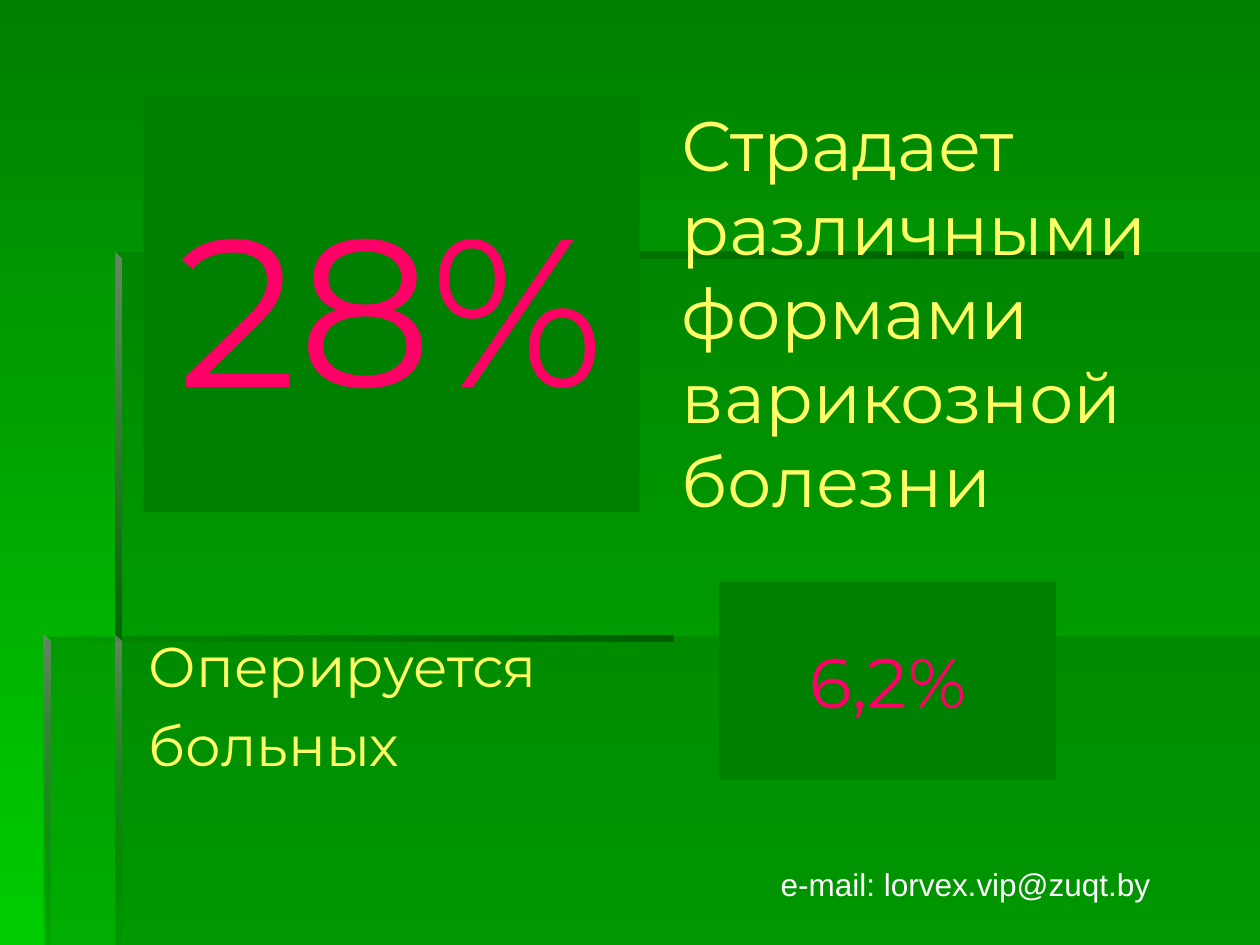
from dataclasses import dataclass

from lxml import etree
from pptx import Presentation
from pptx.dml.color import RGBColor
from pptx.enum import shapes, text
from pptx.oxml import ns
from pptx.util import Pt

WIDTH, HEIGHT = 720, 540
BAR = 3.6
GREEN, SHADE, DEEP, EDGE = "008000", "006600", "005E00", "668666"
PINK, YELLOW, WHITE = "FF0066", "FFFF66", "FFFFFF"


@dataclass
class Stop:
    color: str
    opacity: int = 100


@dataclass
class Bar:
    left: float
    top: float
    length: float
    start: Stop
    end: Stop
    vertical: bool = False

    def outline(self) -> list[tuple[float, float]]:
        if self.vertical:
            right, bottom = self.left + BAR, self.top + self.length
            return [(self.left, self.top), (self.left, bottom),
                    (right, bottom), (right, self.top + BAR)]
        right, bottom = self.left + self.length, self.top + BAR
        return [(self.left, self.top), (self.left, bottom),
                (right, bottom), (right, self.top)]


@dataclass
class Figure:
    left: float
    top: float
    width: float
    height: float
    label: str
    size: int


@dataclass
class Caption:
    left: float
    top: float
    width: float
    height: float
    lines: list[str]
    size: int
    color: str = YELLOW
    font: str = "Montserrat"
    space_before: float = 0


def rgb(color: str) -> RGBColor:
    return RGBColor.from_string(color)


def set_stops(fill, start: Stop, end: Stop, angle: int) -> None:
    fill.gradient()
    gradient = fill._fill._gradFill
    for child in list(gradient):
        gradient.remove(child)
    stops = etree.SubElement(gradient, ns.qn("a:gsLst"))
    for position, stop in ((0, start), (100000, end)):
        node = etree.SubElement(stops, ns.qn("a:gs"), pos=str(position))
        color = etree.SubElement(node, ns.qn("a:srgbClr"), val=stop.color)
        if stop.opacity < 100:
            etree.SubElement(color, ns.qn("a:alpha"), val=str(stop.opacity * 1000))
    etree.SubElement(gradient, ns.qn("a:lin"), ang=str(angle * 60000), scaled="0")


def draw_outline(slide, points: list[tuple[float, float]]):
    corners = [(Pt(x), Pt(y)) for x, y in points]
    builder = slide.shapes.build_freeform(*corners[0], scale=1.0)
    builder.add_line_segments(corners[1:], close=True)
    shape = builder.convert_to_shape()
    shape.shadow.inherit = False
    shape.line.fill.background()
    return shape


def draw_panel(slide, points: list[tuple[float, float]]) -> None:
    fill = draw_outline(slide, points).fill
    fill.solid()
    fill.fore_color.rgb = rgb(SHADE)
    color = fill._fill._solidFill.find(ns.qn("a:srgbClr"))
    etree.SubElement(color, ns.qn("a:alpha"), val="30000")


def draw_bar(slide, bar: Bar) -> None:
    shape = draw_outline(slide, bar.outline())
    set_stops(shape.fill, bar.start, bar.end, 90 if bar.vertical else 0)


def set_font(paragraph, name: str, size: int, color: str) -> None:
    paragraph.font.name = name
    paragraph.font.size = Pt(size)
    paragraph.font.color.rgb = rgb(color)


def draw_figure(slide, figure: Figure) -> None:
    shape = slide.shapes.add_shape(
        shapes.MSO_SHAPE.RECTANGLE, Pt(figure.left), Pt(figure.top),
        Pt(figure.width), Pt(figure.height))
    shape.shadow.inherit = False
    shape.fill.solid()
    shape.fill.fore_color.rgb = rgb(GREEN)
    shape.line.fill.background()
    frame = shape.text_frame
    frame.word_wrap = False
    frame.vertical_anchor = text.MSO_ANCHOR.MIDDLE
    paragraph = frame.paragraphs[0]
    paragraph.text = figure.label
    paragraph.alignment = text.PP_ALIGN.CENTER
    set_font(paragraph, "Montserrat", figure.size, PINK)


def draw_caption(slide, caption: Caption) -> None:
    box = slide.shapes.add_textbox(
        Pt(caption.left), Pt(caption.top), Pt(caption.width), Pt(caption.height))
    frame = box.text_frame
    frame.word_wrap = True
    frame.text = "\n".join(caption.lines)
    for paragraph in frame.paragraphs:
        paragraph.space_before = Pt(caption.space_before)
        set_font(paragraph, caption.font, caption.size, caption.color)


PANELS = [
    [(66, 363.6), (66, HEIGHT), (WIDTH, HEIGHT), (WIDTH, 363.6)],
    [(67.5, 364), (26, 364), (26, HEIGHT), (WIDTH, HEIGHT), (WIDTH, 144), (67.5, 144)],
]
BARS = [
    Bar(66, 144, 576, Stop(SHADE, 0), Stop(DEEP)),
    Bar(66, 144, 223, Stop(EDGE), Stop(SHADE), vertical=True),
    Bar(66, 363, 177, Stop(EDGE), Stop(SHADE, 0), vertical=True),
    Bar(25, 363, 360, Stop(SHADE, 0), Stop(DEEP)),
    Bar(25, 363, 177, Stop(EDGE), Stop(SHADE, 10), vertical=True),
]
FIGURES = [
    Figure(82, 54.5, 283.5, 238, "28%", 120),
    Figure(411, 332.5, 192.5, 113, "6,2%", 40),
]
CAPTIONS = [
    Caption(382.5, 54.5, 312, 137,
            ["Страдает различными формами варикозной болезни"], 40),
    Caption(78, 357.5, 293, 92, ["Оперируется", "больных"], 32, space_before=6.4),
    Caption(439, 491, 260.5, 29, ["е-mail: lorvex.vip@zuqt.by"], 18, WHITE, "Arial"),
]


def main() -> None:
    presentation = Presentation()
    presentation.slide_width, presentation.slide_height = Pt(WIDTH), Pt(HEIGHT)
    slide = presentation.slides.add_slide(presentation.slide_layouts[6])
    set_stops(slide.background.fill, Stop(GREEN), Stop("00CC00"), 90)
    for panel in PANELS:
        draw_panel(slide, panel)
    for bar in BARS:
        draw_bar(slide, bar)
    for figure in FIGURES:
        draw_figure(slide, figure)
    for caption in CAPTIONS:
        draw_caption(slide, caption)
    presentation.save("out.pptx")


if __name__ == "__main__":
    main()
